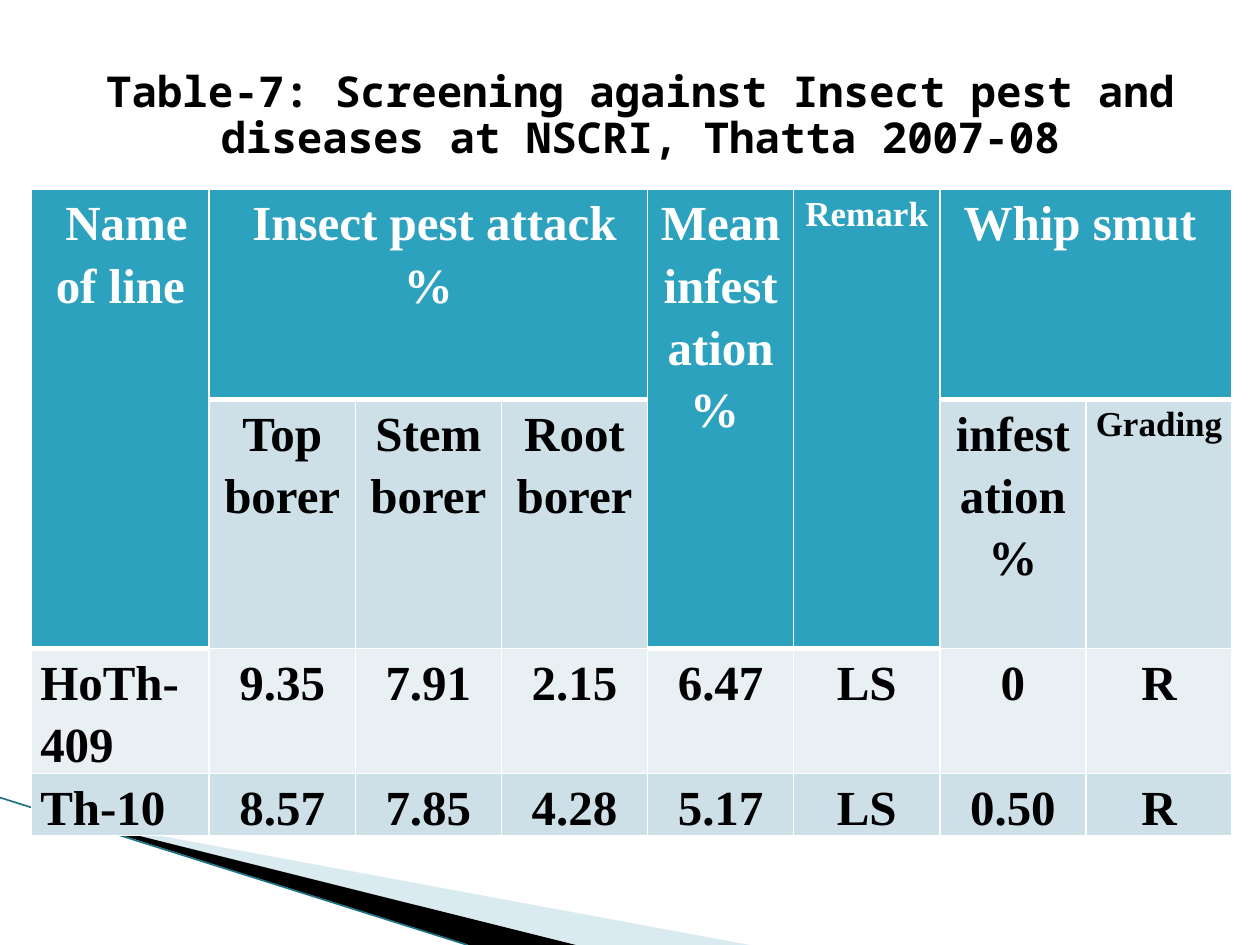
from lxml import etree
from pptx import Presentation
from pptx.dml.color import RGBColor
from pptx.enum import shapes, text
from pptx.oxml.ns import qn
from pptx.util import Inches, Pt

WHITE, BLACK = "FFFFFF", "000000"
HEADER, BAND_DARK, BAND_LIGHT = "2DA2BF", "CDE0E8", "E8F0F4"
COLUMN_WIDTHS = [1.41] + [1.16] * 7
ROW_HEIGHTS = [1.67, 1.47, 0.97, 0.47]
ROW_FILLS = [HEADER, BAND_DARK, BAND_LIGHT, BAND_DARK]
ROWS = [
    [" Name of line", " Insect pest attack %", None, None,
     "Mean infestation % ", "Remark", "Whip smut ", None],
    [None, "Top borer", "Stem borer", "Root borer",
     None, None, "infestation %", "Grading"],
    ["HoTh-409", "9.35", "7.91", "2.15", "6.47", "LS", "0", "R"],
    ["Th-10", "8.57", "7.85", "4.28", "5.17", "LS", "0.50", "R"],
]
MERGES = [((0, 0), (1, 0)), ((0, 1), (0, 3)), ((0, 4), (1, 4)),
          ((0, 5), (1, 5)), ((0, 6), (0, 7))]
SMALL_LABELS = ("Remark", "Grading")


def rgb(value):
    return RGBColor.from_string(value)


def style_runs(paragraph, size, font, color):
    for run in paragraph.runs:
        run.font.size = Pt(size)
        run.font.name = font
        run.font.bold = True
        run.font.color.rgb = rgb(color)


def add_wedge(slide, points, color, opacity=None):
    """Add a filled outline; opacity is a percentage."""
    corners = [(Inches(x), Inches(y)) for x, y in points]
    builder = slide.shapes.build_freeform(*corners[0])
    builder.add_line_segments(corners[1:], close=True)
    wedge = builder.convert_to_shape()
    wedge.shadow.inherit = False
    wedge.line.fill.background()
    wedge.fill.solid()
    wedge.fill.fore_color.rgb = rgb(color)
    if opacity is not None:
        color_node = wedge.fill._xPr.find(qn("a:solidFill"))[0]
        etree.SubElement(color_node, qn("a:alpha"), val=str(opacity * 1000))


def add_line(slide, start, end, color, width):
    line = slide.shapes.add_connector(
        shapes.MSO_CONNECTOR.STRAIGHT, *map(Inches, start + end))
    line.line.color.rgb = rgb(color)
    line.line.width = Pt(width)
    etree.SubElement(line._element.spPr, qn("a:effectLst"))


def set_borders(cell, bottom_width):
    """Draw white cell borders; must run before the fill is set."""
    properties = cell._tc.get_or_add_tcPr()
    for side, width in (("L", 1), ("R", 1), ("T", 1), ("B", bottom_width)):
        border = etree.SubElement(properties, qn("a:ln" + side), w=str(Pt(width)))
        fill = etree.SubElement(border, qn("a:solidFill"))
        etree.SubElement(fill, qn("a:srgbClr"), val=WHITE)


def fill_cell(cell, label, is_header, color, centred):
    set_borders(cell, 3 if is_header else 1)
    cell.fill.solid()
    cell.fill.fore_color.rgb = rgb(color)
    cell.margin_left = cell.margin_right = Inches(0.07)
    cell.margin_top = cell.margin_bottom = 0
    if label is None:
        return
    cell.text_frame.text = label
    paragraph = cell.text_frame.paragraphs[0]
    paragraph.line_spacing = 1.15
    if centred:
        paragraph.alignment = text.PP_ALIGN.CENTER
    style_runs(paragraph, 20 if label in SMALL_LABELS else 28,
               "Times New Roman", WHITE if is_header else BLACK)


def add_screening_table(slide):
    table = slide.shapes.add_table(
        len(ROWS), len(COLUMN_WIDTHS), Inches(0.25), Inches(1.5),
        Inches(sum(COLUMN_WIDTHS)), Inches(sum(ROW_HEIGHTS))).table
    table.first_row = table.horz_banding = False
    for column, width in zip(table.columns, COLUMN_WIDTHS):
        column.width = Inches(width)
    for row, height in zip(table.rows, ROW_HEIGHTS):
        row.height = Inches(height)
    for first, last in MERGES:
        table.cell(*first).merge(table.cell(*last))
    for r, labels in enumerate(ROWS):
        for c, label in enumerate(labels):
            is_header = r == 0 or label is None
            fill_cell(table.cell(r, c), label, is_header,
                      HEADER if is_header else ROW_FILLS[r],
                      centred=c > 0 or is_header)


def add_title(slide, wording):
    title = slide.shapes.add_textbox(
        Inches(0.5), Inches(0.3), Inches(9.17), Inches(1.25))
    frame = title.text_frame
    frame.word_wrap = True
    frame.vertical_anchor = text.MSO_ANCHOR.MIDDLE
    frame.text = wording
    paragraph = frame.paragraphs[0]
    paragraph.alignment = text.PP_ALIGN.CENTER
    paragraph.line_spacing = 0.9
    style_runs(paragraph, 24.3, "Noto Sans Mono", BLACK)


def main():
    deck = Presentation()
    deck.slide_width, deck.slide_height = Inches(10), Inches(7.5)
    slide = deck.slides.add_slide(deck.slide_layouts[6])
    add_wedge(slide, [(0.55, 6.5), (5.95, 7.5), (4.56, 7.5)], "A0CBDC", 40)
    add_wedge(slide, [(0.53, 6.49), (4.57, 7.5), (3.72, 7.5)], BLACK)
    add_line(slide, (0, 6.33), (3.71, 7.5), "1F7387", 0.95)
    add_screening_table(slide)
    add_title(slide, "Table-7: Screening against Insect pest and diseases "
                     "at NSCRI, Thatta 2007-08")
    deck.save("out.pptx")


if __name__ == "__main__":
    main()
